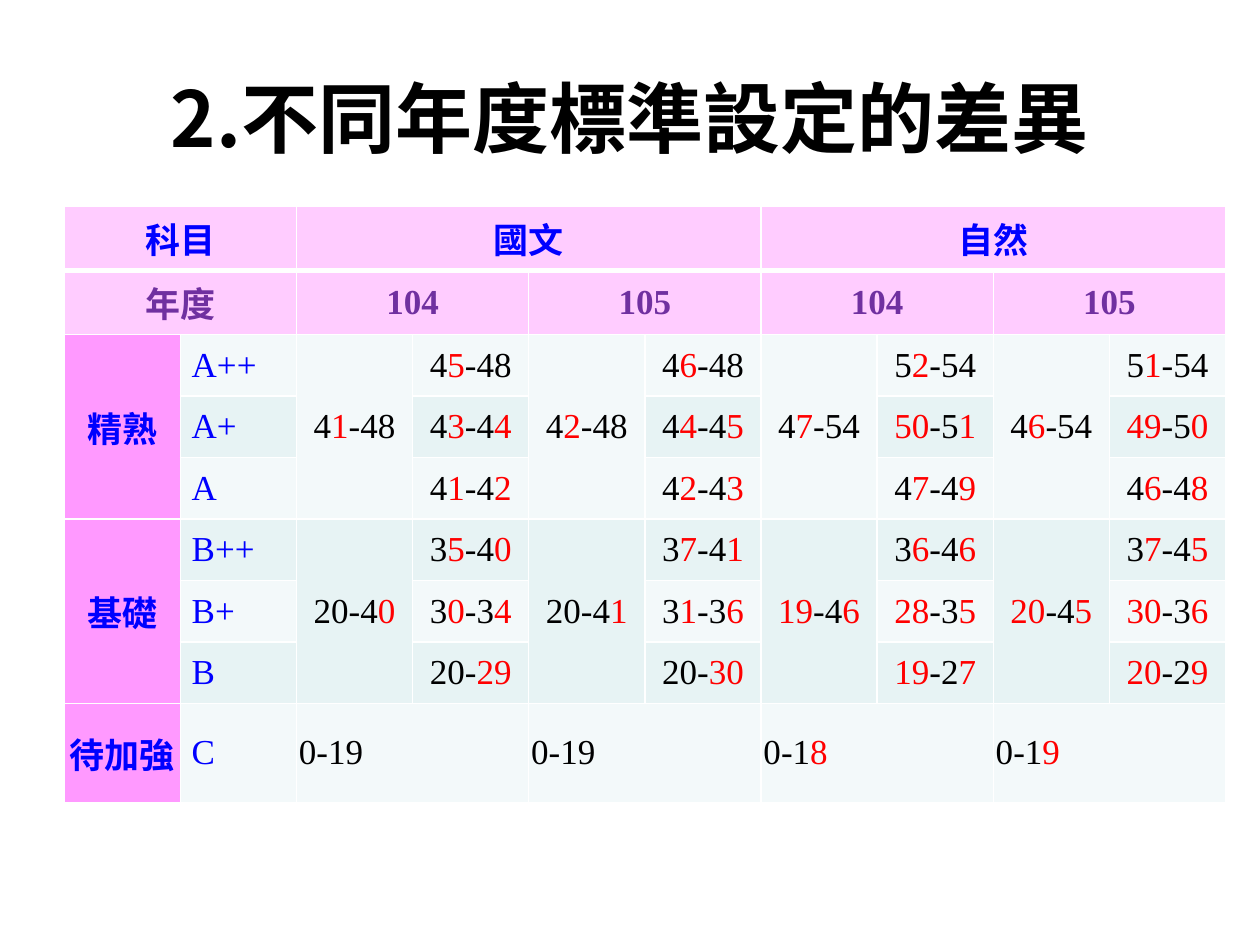
import itertools

import lxml.etree
import pptx
import pptx.dml.color
import pptx.enum.text
import pptx.oxml.ns
import pptx.util

COLORS = {
    "black": "000000", "blue": "0000FF", "purple": "7030A0", "red": "FF0000",
    "header": "FFCCFF", "level": "FF99FF", "light": "F3F9FA", "tint": "E7F3F4",
    "border": "FFFFFF",
}
LATIN_FONT = "Times New Roman"
CHINESE_FONT = "Noto Sans CJK SC"

# "<" continues the cell to the left, "^" the cell above; brackets mark red digits
SCORES = [line.split() for line in """
科目 < 國文 < < < 自然 < < <
年度 < 104 < 105 < 104 < 105 <
精熟 A++ 4[1]-48 4[5]-48 4[2]-48 4[6]-48 4[7]-54 5[2]-54 4[6]-54 5[1]-54
^ A+ ^ 4[3]-4[4] ^ 4[4]-4[5] ^ [50]-5[1] ^ [49]-5[0]
^ A ^ 4[1]-4[2] ^ 4[2]-4[3] ^ 4[7]-4[9] ^ 4[6]-4[8]
基礎 B++ 20-4[0] 3[5]-4[0] 20-4[1] 3[7]-4[1] [19]-4[6] 3[6]-4[6] [20]-4[5] 3[7]-4[5]
^ B+ ^ 3[0]-3[4] ^ 3[1]-3[6] ^ [28]-3[5] ^ [30]-3[6]
^ B ^ 20-[29] ^ 20-[30] ^ [19]-2[7] ^ [20]-2[9]
待加強 C 0-19 < 0-19 < 0-1[8] < 0-1[9] <
""".strip().splitlines()]
ROW_HEIGHTS = [0.51] * 2 + [0.49] * 6 + [0.79]
HEADER_ROWS = 2
LAST_ROW = len(SCORES) - 1


def color(name):
    return pptx.dml.color.RGBColor.from_string(COLORS[name])


def format_span(span, size, bold, color_name, latin=LATIN_FONT):
    span.font.size = pptx.util.Pt(size)
    span.font.bold = bold
    span.font.color.rgb = color(color_name)
    span.font.name = latin
    east_asian = lxml.etree.SubElement(span.font._element, pptx.oxml.ns.qn("a:ea"))
    east_asian.set("typeface", CHINESE_FONT)


def add_title(page, text, box):
    title = page.shapes.title
    title.left, title.top, title.width, title.height = map(pptx.util.Inches, box)
    frame = title.text_frame
    frame.text = text
    frame.vertical_anchor = pptx.enum.text.MSO_ANCHOR.MIDDLE
    para = frame.paragraphs[0]
    para.alignment = pptx.enum.text.PP_ALIGN.CENTER
    format_span(para.runs[0], 44, True, "black", CHINESE_FONT)


def set_borders(cell, row):
    """Draw white edges, with a heavier rule below the subject row."""
    qn = pptx.oxml.ns.qn
    properties = cell._tc.get_or_add_tcPr()
    for index, side in enumerate("LRTB"):
        heavy = (row, side) in ((0, "B"), (1, "T"))
        line = lxml.etree.Element(qn(f"a:ln{side}"), w=str(pptx.util.Pt(3 if heavy else 1)))
        fill = lxml.etree.SubElement(line, qn("a:solidFill"))
        lxml.etree.SubElement(fill, qn("a:srgbClr"), val=COLORS["border"])
        properties.insert(index, line)


def cell_fill(row, column):
    if row < HEADER_ROWS:
        return "header"
    if column == 0:
        return "level"
    return "tint" if row % 2 else "light"


def write_cell(cell, text, row, column):
    grade = row >= HEADER_ROWS and column == 1
    heading = row < HEADER_ROWS or column == 0
    if row == 1:
        base = "purple"
    else:
        base = "blue" if heading or grade else "black"
    para = cell.text_frame.paragraphs[0]
    left = grade or (row == LAST_ROW and column > 0)
    align = pptx.enum.text.PP_ALIGN
    para.alignment = align.LEFT if left else align.CENTER
    if grade:
        cell.margin_left = pptx.util.Inches(0.09)
    for index, part in enumerate(text.replace("]", "[").split("[")):
        if part:
            span = para.add_run()
            span.text = part
            format_span(span, 20, heading, "red" if index % 2 else base)


def merge_cell(table, row, column):
    """Join a cell with the continuation marks to its right and below."""
    across = itertools.takewhile(lambda mark: mark == "<", SCORES[row][column + 1:])
    down = itertools.takewhile(lambda line: line[column] == "^", SCORES[row + 1:])
    last = (row + len(list(down)), column + len(list(across)))
    if last != (row, column):
        table.cell(row, column).merge(table.cell(*last))


def add_score_table(page, box):
    columns = len(SCORES[0])
    frame = page.shapes.add_table(len(SCORES), columns, *map(pptx.util.Inches, box))
    table = frame.table
    for column in table.columns:
        column.width = pptx.util.Inches(box[2] / columns)
    for row, height in zip(table.rows, ROW_HEIGHTS):
        row.height = pptx.util.Inches(height * box[3] / sum(ROW_HEIGHTS))
    for row, line in enumerate(SCORES):
        for column, text in enumerate(line):
            cell = table.cell(row, column)
            cell.margin_left = cell.margin_right = pptx.util.Inches(0.02)
            cell.margin_top = cell.margin_bottom = 0
            cell.vertical_anchor = pptx.enum.text.MSO_ANCHOR.MIDDLE
            set_borders(cell, row)
            cell.fill.solid()
            cell.fill.fore_color.rgb = color(cell_fill(row, column))
            if text not in ("<", "^"):
                write_cell(cell, text, row, column)
                merge_cell(table, row, column)


def main():
    deck = pptx.Presentation()
    width, height = 10, 7.5
    deck.slide_width = pptx.util.Inches(width)
    deck.slide_height = pptx.util.Inches(height)
    page = deck.slides.add_slide(deck.slide_layouts[5])
    add_title(page, "2.不同年度標準設定的差異",
              (width * 0.05, height * 0.04, width * 0.9, height / 6))
    add_score_table(page, (0.51, 1.64, 9.22, 4.73))
    deck.save("out.pptx")


if __name__ == "__main__":
    main()
